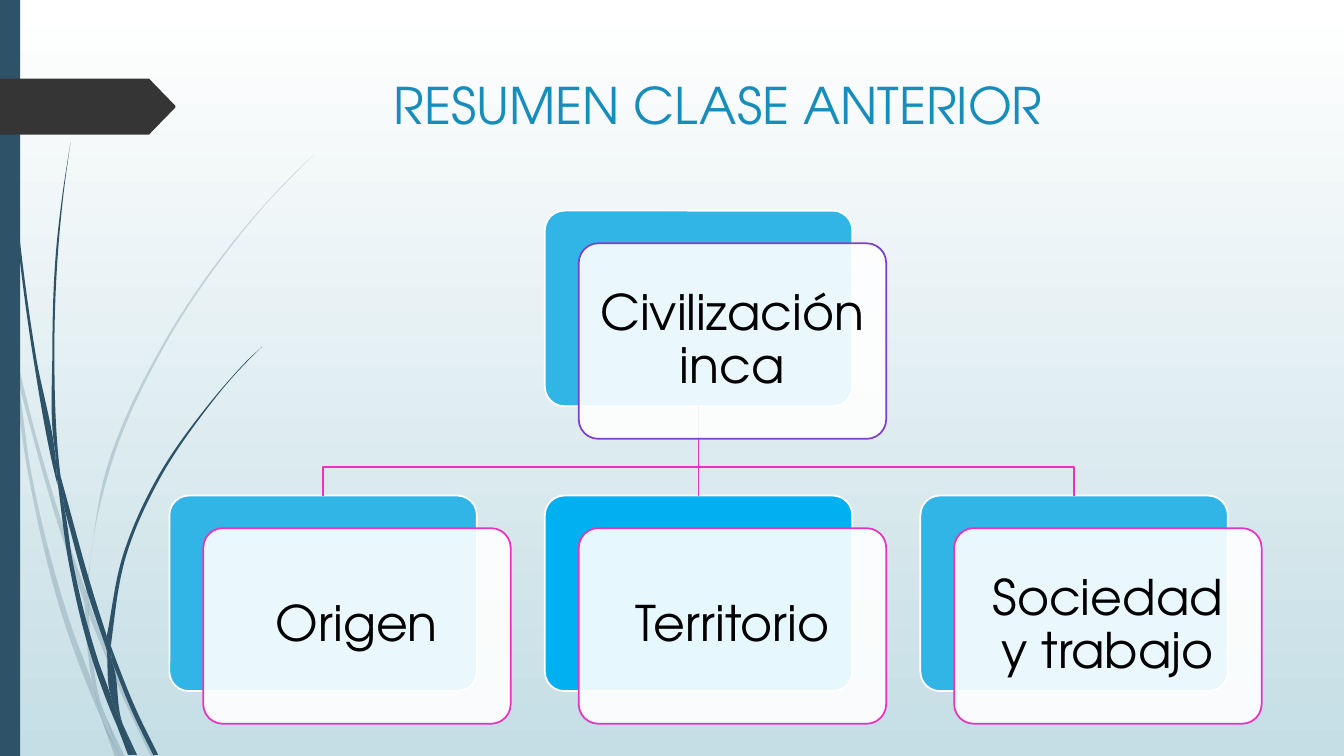
"""Build the class summary slide with a hierarchy of the Inca civilization."""
from dataclasses import dataclass
from math import dist
from typing import Any, Optional

from lxml import etree
from pptx import Presentation
from pptx.dml.color import RGBColor
from pptx.enum.shapes import MSO_CONNECTOR, MSO_SHAPE
from pptx.enum.text import MSO_ANCHOR, PP_ALIGN
from pptx.oxml.ns import qn
from pptx.util import Pt

RECTANGLE, ROUNDED = MSO_SHAPE.RECTANGLE, MSO_SHAPE.ROUNDED_RECTANGLE
STRAIGHT = MSO_CONNECTOR.STRAIGHT
CENTER, TOP, MIDDLE = PP_ALIGN.CENTER, MSO_ANCHOR.TOP, MSO_ANCHOR.MIDDLE

FONT = "TeX Gyre Adventor"
NAVY, PINK, WHITE, BLUE = "2E5369", "E833BF", "FFFFFF", "31B4E6"
LINE_WIDTH = 1.25
BOX_WIDTH, BOX_HEIGHT = 219.6, 139.7
FIRST_LEFT, COLUMN_STEP = 121, 268.2
ROW_TOPS = (150.5, 354)
CARD_SHIFT_X, CARD_SHIFT_Y, LABEL_INSET = 24.2, 23.3, 4
BRANCH_Y = 333.4
STEM_UNIT = 0.72
FINE = 100

Point = tuple[float, float]


@dataclass(frozen=True)
class Node:
    text: str
    column: int
    row: int
    fill: str = BLUE
    outline: str = PINK


@dataclass(frozen=True)
class Blade:
    right: list[Point]
    left: list[Point]


NODES = [
    Node("Civilización inca", 1, 0, outline="7E40CC"),
    Node("Origen", 0, 1),
    Node("Territorio", 1, 1, fill="00B0F0"),
    Node("Sociedad y trabajo", 2, 1),
]

PALE_BLADES = [
    Blade([(0, 282), (9, 322), (11, 350)], [(11, 350), (10, 344), (0, 299)]),
    Blade([(14, 345), (36, 433), (62, 520), (85, 586)], [(84, 599), (58, 522), (17, 376)]),
    Blade([(88, 596), (92, 607), (127, 692), (155, 751)], [(150, 751), (123, 694), (88, 610)]),
    Blade([(105, 711), (124, 751)], [(119, 751), (105, 711)]),
    Blade([(11, 350), (17, 376), (31, 469), (70, 619), (93, 683), (101, 714)],
          [(101, 714), (92, 693), (65, 621), (28, 470), (11, 350)]),
    Blade([(88, 608), (91, 646), (103, 706), (105, 711)],
          [(105, 711), (96, 692), (93, 683), (87, 646), (84, 599)]),
    Blade([(312, 153), (290, 175), (268, 198), (229, 245), (160, 349), (110, 462), (88, 584), (88, 596)],
          [(85, 586), (107, 461), (158, 348), (228, 244), (268, 197), (289, 175), (312, 153)]),
    Blade([(101, 714), (119, 751)], [(114, 751), (101, 714)]),
    Blade([(85, 586), (88, 596), (88, 610)], [(88, 608), (84, 599)]),
    Blade([(93, 683), (96, 692), (105, 711), (119, 751)], [(119, 751), (101, 714), (99, 707), (93, 683)]),
]

DARK_BLADES = [
    Blade([(4, 0), (5, 48), (8, 109), (19, 232), (36, 355), (55, 453), (57, 481)],
          [(57, 481), (56, 477), (33, 355), (17, 233), (7, 110), (4, 48), (3, 0)]),
    Blade([(60, 472), (93, 590), (106, 631)], [(106, 645), (88, 592), (64, 505)]),
    Blade([(110, 641), (113, 649), (136, 706), (157, 749)], [(152, 749), (132, 708), (111, 656)]),
    Blade([(57, 477), (64, 505), (72, 556), (98, 657), (110, 691), (117, 722)],
          [(117, 722), (111, 708), (93, 659), (68, 557), (57, 477)]),
    Blade([(70, 141), (63, 193), (58, 245), (54, 349), (58, 453), (60, 472)],
          [(60, 472), (55, 449), (52, 349), (56, 245), (62, 193), (70, 141)]),
    Blade([(122, 719), (136, 749)], [(133, 749), (122, 719)]),
    Blade([(55, 449), (60, 472), (64, 505)], [(64, 505), (57, 477), (55, 453)]),
    Blade([(260, 344), (245, 359), (231, 374), (205, 406), (158, 476), (125, 552), (111, 633), (110, 641)],
          [(106, 631), (122, 551), (156, 474), (204, 405), (231, 373), (245, 358), (260, 344)]),
    Blade([(117, 722), (131, 749)], [(127, 749), (117, 722)]),
    Blade([(106, 645), (111, 656), (121, 716), (122, 719)], [(122, 719), (116, 706), (110, 691), (106, 645)]),
    Blade([(106, 631), (110, 641), (111, 656)], [(109, 651), (106, 645)]),
    Blade([(110, 691), (116, 706), (122, 719), (133, 749)], [(130, 749), (117, 722), (110, 691)]),
]

TAG = [(0, 56.2), (106.5, 56.2), (125.3, 75.6), (125.3, 76.8), (106.5, 96.1), (0, 96.1)]


def rgb(color: str) -> RGBColor:
    return RGBColor.from_string(color)


def paint(shape: Any, fill: Optional[str], line: Optional[str] = None, opacity: int = 100) -> None:
    shape.shadow.inherit = False
    if fill:
        shape.fill.solid()
        shape.fill.fore_color.rgb = rgb(fill)
        if opacity < 100:
            color = shape.fill._xPr.find(f"{qn('a:solidFill')}/{qn('a:srgbClr')}")
            etree.SubElement(color, qn("a:alpha"), val=str(opacity * 1000))
    else:
        shape.fill.background()
    if line:
        shape.line.color.rgb = rgb(line)
        shape.line.width = Pt(LINE_WIDTH)
    else:
        shape.line.fill.background()


def write(shape: Any, text: str, size: float, color: str, anchor: Any, inset: float, spacing: float) -> None:
    frame = shape.text_frame
    paragraph = frame.paragraphs[0]
    paragraph.text = text
    margins = {f"margin_{side}": Pt(inset) for side in ("left", "top", "right", "bottom")}
    formats = [
        (frame, {"word_wrap": True, "vertical_anchor": anchor, **margins}),
        (paragraph, {"alignment": CENTER, "line_spacing": spacing}),
        (paragraph.font, {"name": FONT, "size": Pt(size)}),
        (paragraph.font.color, {"rgb": rgb(color)}),
    ]
    for target, values in formats:
        for name, value in values.items():
            setattr(target, name, value)


def curve_edge(points: list[Point]) -> list[Point]:
    lengths = [dist(start, end) for start, end in zip(points, points[1:])]
    slopes = [tuple((b - a) / length for a, b in zip(start, end))
              for start, end, length in zip(points, points[1:], lengths)]
    tangents = [slopes[0]]
    for i in range(1, len(slopes)):
        before, after = lengths[i - 1], lengths[i]
        tangents.append(tuple((p * after + q * before) / (before + after)
                              for p, q in zip(slopes[i - 1], slopes[i])))
    tangents.append(slopes[-1])
    curve = []
    for i, length in enumerate(lengths):
        curve.append(tuple(a + m * length / 3 for a, m in zip(points[i], tangents[i])))
        curve.append(tuple(b - n * length / 3 for b, n in zip(points[i + 1], tangents[i + 1])))
        curve.append(points[i + 1])
    return curve


def add_outline(slide: Any, points: list[Point], unit: float, close: bool) -> Any:
    fine_points = [(x * FINE, y * FINE) for x, y in points]
    builder = slide.shapes.build_freeform(*fine_points[0], scale=Pt(unit) / FINE)
    builder.add_line_segments(fine_points[1:], close=close)
    return builder.convert_to_shape()


def add_blade(slide: Any, blade: Blade, opacity: int) -> None:
    outline = [blade.right[0], *curve_edge(blade.right)]
    if blade.right[-1] != blade.left[0]:
        outline += curve_edge([blade.right[-1], blade.left[0]])
    outline += curve_edge(blade.left)
    if outline[-1] != outline[0]:
        outline += curve_edge([outline[-1], outline[0]])
    shape = add_outline(slide, outline, STEM_UNIT, True)
    segments = list(shape._element.iter(qn("a:lnTo")))
    for i in range(0, len(segments) - 2, 3):
        curve = etree.Element(qn("a:cubicBezTo"))
        segments[i].addprevious(curve)
        for segment in segments[i:i + 3]:
            curve.append(segment[0])
            segment.getparent().remove(segment)
    paint(shape, NAVY, opacity=opacity)


def box_corner(node: Node) -> Point:
    return FIRST_LEFT + COLUMN_STEP * node.column, ROW_TOPS[node.row]


def add_box(slide: Any, left: float, top: float, fill: str, line: str, opacity: int = 100) -> Any:
    box = slide.shapes.add_shape(ROUNDED, Pt(left), Pt(top), Pt(BOX_WIDTH), Pt(BOX_HEIGHT))
    box.adjustments[0] = 0.1
    paint(box, fill, line, opacity)
    return box


def add_link(slide: Any, parent: Node, child: Node, parent_back: Any, child_back: Any) -> None:
    (start_x, start_y), (end_x, end_y) = box_corner(parent), box_corner(child)
    start_x, end_x, start_y = start_x + BOX_WIDTH / 2, end_x + BOX_WIDTH / 2, start_y + BOX_HEIGHT
    if parent.column == child.column:
        link = slide.shapes.add_connector(STRAIGHT, Pt(start_x), Pt(start_y), Pt(end_x), Pt(end_y))
        link.begin_connect(parent_back, 2)
        link.end_connect(child_back, 0)
        link.line.color.rgb = rgb(PINK)
        link.line.width = Pt(LINE_WIDTH)
        etree.SubElement(link._element.spPr, qn("a:effectLst"))
    else:
        corners = [(start_x, start_y), (start_x, BRANCH_Y), (end_x, BRANCH_Y), (end_x, end_y)]
        paint(add_outline(slide, corners, 1, False), None, PINK)


def add_card(slide: Any, node: Node) -> None:
    left, top = box_corner(node)
    left, top = left + CARD_SHIFT_X, top + CARD_SHIFT_Y
    add_box(slide, left, top, WHITE, node.outline, 90)
    label = slide.shapes.add_textbox(Pt(left + LABEL_INSET), Pt(top + LABEL_INSET),
                                     Pt(BOX_WIDTH - 2 * LABEL_INSET), Pt(BOX_HEIGHT - 2 * LABEL_INSET))
    write(label, node.text, 35, "000000", MIDDLE, 10.8, 0.9)


def main() -> None:
    presentation = Presentation()
    presentation.slide_width, presentation.slide_height = Pt(960), Pt(540)
    slide = presentation.slides.add_slide(presentation.slide_layouts[6])
    background = slide.background.fill
    background.gradient()
    background.gradient_angle = 270
    for stop, color in zip(background.gradient_stops, (WHITE, "C5DEE5")):
        stop.color.rgb = rgb(color)
    for blades, opacity in ((PALE_BLADES, 20), (DARK_BLADES, 100)):
        for blade in blades:
            add_blade(slide, blade, opacity)
    paint(slide.shapes.add_shape(RECTANGLE, Pt(0), Pt(0), Pt(14.4), Pt(540)), NAVY)
    paint(add_outline(slide, TAG, 1, True), "353535")
    title = slide.shapes.add_textbox(Pt(226), Pt(49.4), Pt(574), Pt(100.8))
    write(title, "RESUMEN CLASE ANTERIOR", 36, "178DBB", TOP, 3.6, 1)
    backs = [add_box(slide, *box_corner(node), node.fill, WHITE) for node in NODES]
    for child, child_back in zip(NODES[1:], backs[1:]):
        add_link(slide, NODES[0], child, backs[0], child_back)
    for node in NODES:
        add_card(slide, node)
    presentation.save("out.pptx")


if __name__ == "__main__":
    main()
